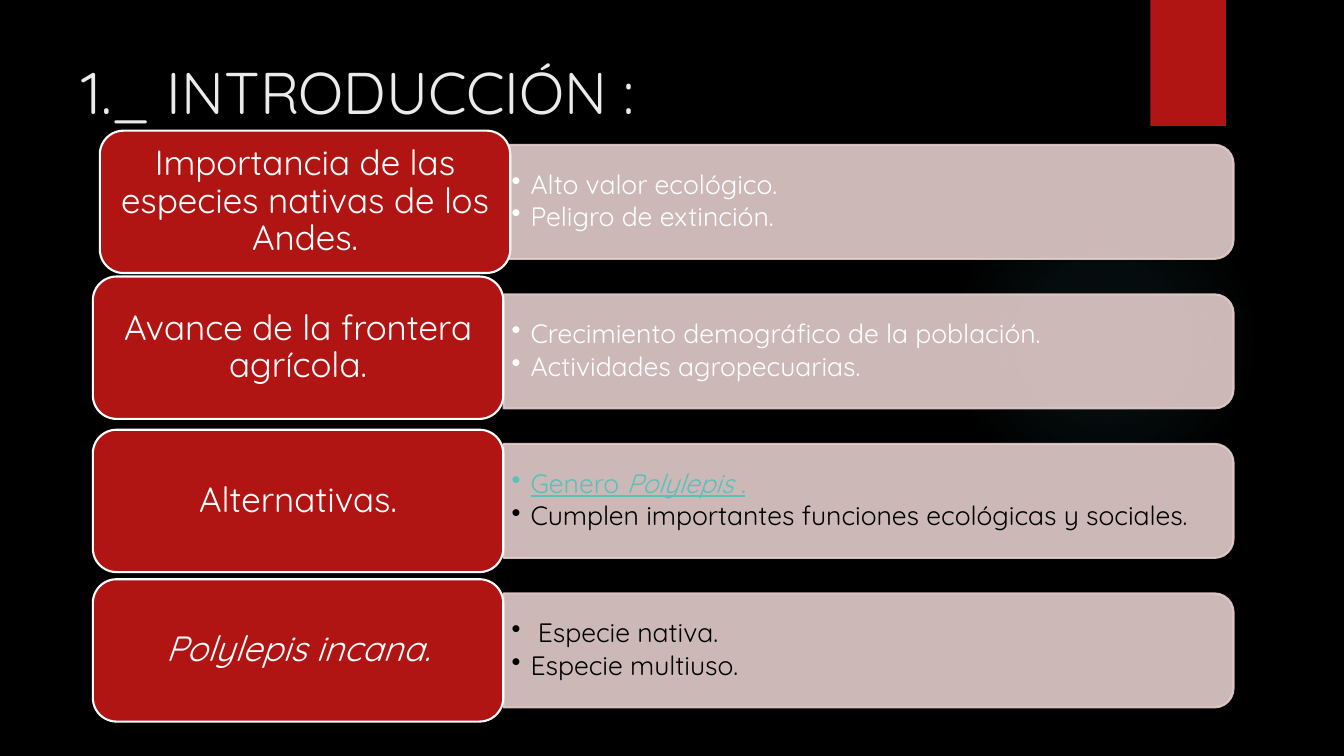
from dataclasses import dataclass

from lxml.etree import SubElement
from pptx import Presentation
from pptx.dml.color import RGBColor
from pptx.enum.shapes import MSO_SHAPE
from pptx.enum.text import MSO_ANCHOR, PP_ALIGN
from pptx.oxml.ns import qn
from pptx.util import Pt

# Content
HEADING = "1._ INTRODUCCIÓN :"
# Each topic: label, label is italic, (x, y) nudge of the label, points.
# Each point: text colour, underlined, runs of (text, italic).
TOPICS = [
    ("Importancia de las especies nativas de los Andes.", False, (5, 0), [
        ("white", False, [("Alto valor ecológico.", False)]),
        ("white", False, [("Peligro de extinción.", False)]),
    ]),
    ("Avance de la frontera agrícola.", False, (0, -2.6), [
        ("white", False, [("Crecimiento demográfico de la población.", False)]),
        ("white", False, [("Actividades agropecuarias.", False)]),
    ]),
    ("Alternativas.", False, (0, 0), [
        ("teal", True, [("Genero ", False), ("Polylepis .", True)]),
        ("black", False, [("Cumplen importantes funciones ecológicas y sociales.", False)]),
    ]),
    ("Polylepis incana.", True, (0, 0), [
        ("black", False, [(" Especie nativa.", False)]),
        ("black", False, [("Especie multiuso.", False)]),
    ]),
]


@dataclass(frozen=True)
class Theme:
    font: str = "Quicksand"
    black: str = "000000"
    white: str = "FFFFFF"
    heading: str = "EBEBEB"
    red: str = "B01513"
    panel: str = "E4CCCC"
    teal: str = "58C1BA"
    glow: str = "50B9C1"
    heading_size: float = 42
    label_size: float = 25
    point_size: float = 19


THEME = Theme()

# Layout, in points
SLIDE_W, SLIDE_H = 960, 540
ROW_Y, ROW_STEP = 144.2, 106.8  # centre of the first row, distance between rows
PANEL_X, PANEL_W, PANEL_H = 359.7, 521.4, 81.4
POINTS_W, POINTS_H = 517.7, 73.4
LABEL_X, LABEL_W, LABEL_H = 66.3, 293.2, 101.7
BULLET_INDENT = 13.5


def color(value):
    return RGBColor.from_string(value)


def add_alpha(fill_format_xml, percent):
    for srgb in fill_format_xml.iter(qn("a:srgbClr")):
        SubElement(srgb, qn("a:alpha"), val=str(percent * 1000))


def add_block(slide, kind, x, y, w, h, fill, line=None):
    block = slide.shapes.add_shape(kind, Pt(x), Pt(y), Pt(w), Pt(h))
    block.shadow.inherit = False
    block.fill.solid()
    block.fill.fore_color.rgb = color(fill)
    if line:
        block.line.color.rgb = color(line)
        block.line.width = Pt(1.5)
    else:
        block.line.fill.background()
    return block


def set_insets(frame, x, y):
    frame.margin_left = frame.margin_right = Pt(x)
    frame.margin_top = frame.margin_bottom = Pt(y)
    frame.vertical_anchor = MSO_ANCHOR.MIDDLE
    frame.word_wrap = True


def set_font(paragraph, size, rgb):
    paragraph.font.name = THEME.font
    paragraph.font.size = Pt(size)
    paragraph.font.color.rgb = color(rgb)


def add_glow(slide):
    glow = add_block(slide, MSO_SHAPE.OVAL, 677.5, 131.8, 221.8, 221.8, THEME.glow)
    props = glow.fill._xPr
    solid = props.find(qn("a:solidFill"))
    gradient = solid.makeelement(qn("a:gradFill"), {"rotWithShape": "1"})
    stops = SubElement(gradient, qn("a:gsLst"))
    for position, opacity in ((0, 7), (36, 6), (69, 0)):
        stop = SubElement(stops, qn("a:gs"), pos=str(position * 1000))
        SubElement(stop, qn("a:srgbClr"), val=THEME.glow)
        add_alpha(stop, opacity)
    circle = SubElement(gradient, qn("a:path"), {"path": "circle"})
    SubElement(circle, qn("a:fillToRect"), dict.fromkeys("ltrb", "50000"))
    props.replace(solid, gradient)


def add_panel(slide, middle):
    # The shape stands upright and is turned so its round corners face right
    panel = add_block(slide, MSO_SHAPE.ROUND_2_SAME_RECTANGLE,
                      PANEL_X + (PANEL_W - PANEL_H) / 2, middle - PANEL_W / 2,
                      PANEL_H, PANEL_W, THEME.panel, THEME.panel)
    panel.rotation = 90
    add_alpha(panel.fill._xPr, 90)


def add_points(slide, middle, points):
    box = slide.shapes.add_textbox(Pt(PANEL_X), Pt(middle - POINTS_H / 2),
                                   Pt(POINTS_W), Pt(POINTS_H))
    frame = box.text_frame
    set_insets(frame, 5.8, 2.9)
    for index, (tone, underlined, runs) in enumerate(points):
        point = frame.add_paragraph() if index else frame.paragraphs[0]
        point.level = 1
        props = point._p.get_or_add_pPr()
        props.set("marL", str(Pt(BULLET_INDENT)))
        props.set("indent", str(-Pt(BULLET_INDENT)))
        SubElement(props, qn("a:buChar"), char="•")
        point.line_spacing = 0.9
        point.space_after = Pt(2.85)
        set_font(point, THEME.point_size, getattr(THEME, tone))
        point.font.underline = underlined
        for text, italic in runs:
            run = point.add_run()
            run.text = text
            if italic:
                run.font.italic = True


def add_label(slide, middle, text, italic, nudge):
    label = add_block(slide, MSO_SHAPE.ROUNDED_RECTANGLE, LABEL_X + nudge[0],
                      middle - LABEL_H / 2 + nudge[1], LABEL_W, LABEL_H,
                      THEME.red, THEME.white)
    set_insets(label.text_frame, 7.5, 3.75)
    paragraph = label.text_frame.paragraphs[0]
    paragraph.text = text
    paragraph.alignment = PP_ALIGN.CENTER
    paragraph.line_spacing = 0.9
    set_font(paragraph, THEME.label_size, THEME.white)
    paragraph.font.italic = italic


def main():
    deck = Presentation()
    deck.slide_width, deck.slide_height = Pt(SLIDE_W), Pt(SLIDE_H)
    slide = deck.slides.add_slide(deck.slide_layouts[5])
    slide.background.fill.solid()
    slide.background.fill.fore_color.rgb = color(THEME.black)

    # Backdrop: faint glow and red tab
    add_glow(slide)
    add_block(slide, MSO_SHAPE.RECTANGLE, 821.7, 0, 54, 90, THEME.red)

    # Title
    title = slide.shapes.title
    title.left, title.top, title.width, title.height = Pt(51), Pt(36), Pt(741), Pt(57.6)
    set_insets(title.text_frame, 7.2, 3.6)
    heading = title.text_frame.paragraphs[0]
    heading.text = HEADING
    heading.alignment = PP_ALIGN.LEFT
    set_font(heading, THEME.heading_size, THEME.heading)

    # Rows: panel, its points, and the label over its left end
    for row, (label, italic, nudge, points) in enumerate(TOPICS):
        middle = ROW_Y + row * ROW_STEP
        add_panel(slide, middle)
        add_points(slide, middle, points)
        add_label(slide, middle, label, italic, nudge)

    deck.save("out.pptx")


if __name__ == "__main__":
    main()
